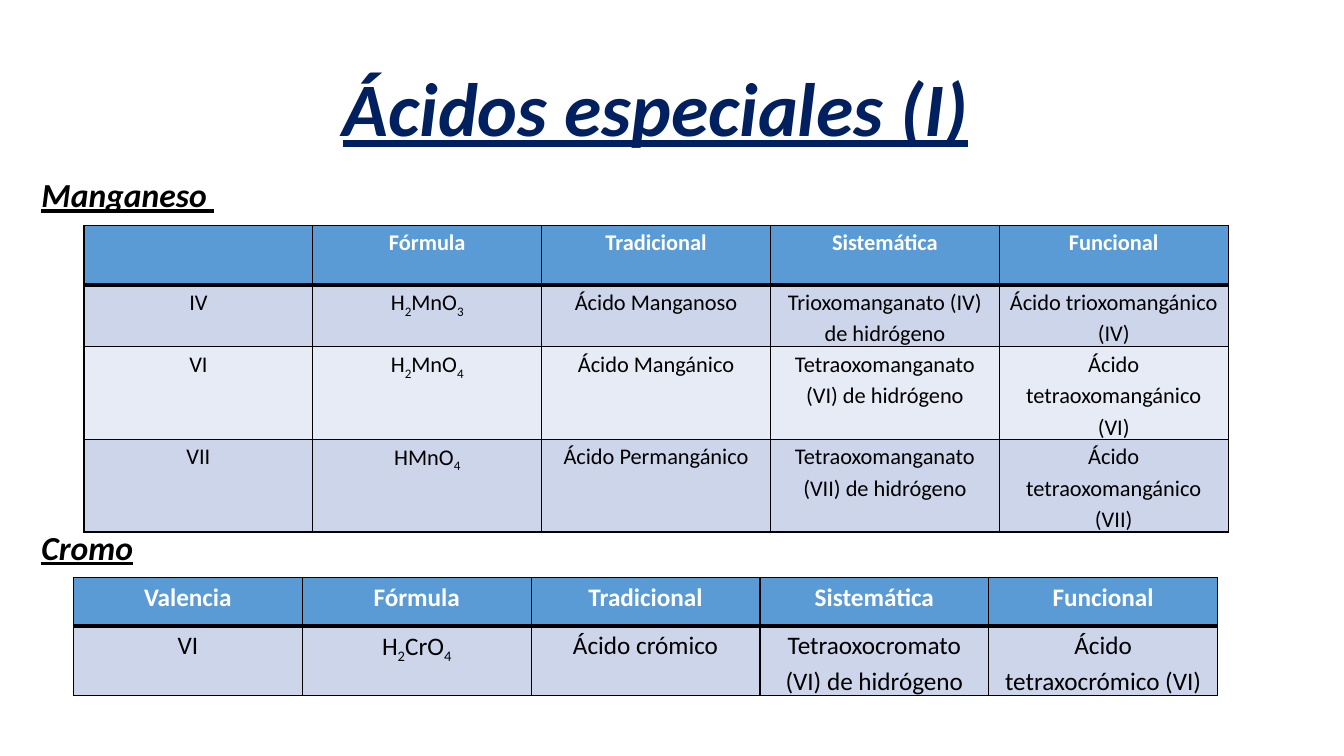
from itertools import groupby

from lxml import etree
from pptx import Presentation
from pptx.dml.color import RGBColor
from pptx.enum.text import MSO_ANCHOR, PP_ALIGN
from pptx.oxml.ns import qn
from pptx.util import Pt

CENTER = PP_ALIGN.CENTER
LEFT = PP_ALIGN.LEFT
TOP = MSO_ANCHOR.TOP
BOTTOM = MSO_ANCHOR.BOTTOM

NAVY = RGBColor(0x00, 0x20, 0x60)
BLACK = RGBColor(0x00, 0x00, 0x00)
WHITE = RGBColor(0xFF, 0xFF, 0xFF)
HEADER_BLUE = RGBColor(0x5B, 0x9B, 0xD5)
BANDS = (RGBColor(0xCC, 0xD5, 0xEA), RGBColor(0xE7, 0xEB, 0xF5))

FONT = "Calibri"
COLUMN_WIDTH = 163.45
THIN, THICK = 1, 3

MANGANESE = [
    ["", "Fórmula", "Tradicional", "Sistemática", "Funcional"],
    ["IV", "H2MnO3", "Ácido Manganoso",
     "Trioxomanganato (IV) de hidrógeno", "Ácido trioxomangánico (IV)"],
    ["VI", "H2MnO4", "Ácido Mangánico",
     "Tetraoxomanganato (VI) de hidrógeno", "Ácido tetraoxomangánico (VI)"],
    ["VII", "HMnO4", "Ácido Permangánico",
     "Tetraoxomanganato (VII) de hidrógeno", "Ácido tetraoxomangánico (VII)"],
]
CHROMIUM = [
    ["Valencia", "Fórmula", "Tradicional", "Sistemática", "Funcional"],
    ["VI", "H2CrO4", "Ácido crómico",
     "Tetraoxocromato (VI) de hidrógeno", "Ácido tetraxocrómico (VI)"],
]


def set_font(para, size, color, bold):
    para.font.name = FONT
    para.font.size = Pt(size)
    para.font.color.rgb = color
    para.font.bold = bold


def add_heading(page, text, left, top, height, size, color, align, anchor):
    box = page.shapes.add_textbox(Pt(left), Pt(top), Pt(824.5), Pt(height))
    frame = box.text_frame
    frame.word_wrap = True
    frame.vertical_anchor = anchor
    para = frame.paragraphs[0]
    para.text = text
    para.alignment = align
    para.line_spacing = 0.9
    set_font(para, size, color, True)
    para.font.italic = True
    para.font.underline = True


def add_formula(para, text):
    for is_digit, letters in groupby(text, str.isdigit):
        span = para.add_run()
        span.text = "".join(letters)
        if is_digit:
            span._r.get_or_add_rPr().set("baseline", "-25000")


def set_borders(cell, top, bottom):
    properties = cell._tc.get_or_add_tcPr()
    widths = {"a:lnL": THIN, "a:lnR": THIN, "a:lnT": top, "a:lnB": bottom}
    for tag, width in widths.items():
        line = etree.SubElement(properties, qn(tag), w=str(Pt(width)))
        fill = etree.SubElement(line, qn("a:solidFill"))
        etree.SubElement(fill, qn("a:srgbClr"), val=str(BLACK))


def fill_cell(cell, text, row, size, space_after):
    is_header = row == 0
    set_borders(cell, THICK if row == 1 else THIN, THICK if is_header else THIN)
    cell.fill.solid()
    cell.fill.fore_color.rgb = HEADER_BLUE if is_header else BANDS[(row - 1) % 2]
    cell.margin_left = cell.margin_right = Pt(7)
    cell.margin_top = cell.margin_bottom = Pt(0)
    para = cell.text_frame.paragraphs[0]
    para.alignment = CENTER
    para.line_spacing = 1.15
    para.space_after = Pt(space_after)
    add_formula(para, text)
    set_font(para, size, WHITE if is_header else BLACK, is_header)


def add_acid_table(page, rows, left, top, row_height, size, space_after):
    columns = len(rows[0])
    table = page.shapes.add_table(
        len(rows), columns, Pt(left), Pt(top),
        Pt(columns * COLUMN_WIDTH), Pt(len(rows) * row_height)).table
    table.horz_banding = False
    for column in table.columns:
        column.width = Pt(COLUMN_WIDTH)
    for row, texts in enumerate(rows):
        table.rows[row].height = Pt(row_height)
        for column, text in enumerate(texts):
            fill_cell(table.cell(row, column), text, row, size, space_after)


def main():
    deck = Presentation()
    deck.slide_width = Pt(960)
    deck.slide_height = Pt(540)
    page = deck.slides.add_slide(deck.slide_layouts[6])

    add_heading(page, "Ácidos especiales (I)", 56, 50.5, 62, 54, NAVY, CENTER, BOTTOM)
    add_heading(page, "Manganeso ", 22.5, 124, 36, 24, BLACK, LEFT, TOP)
    add_heading(page, "Cromo", 22.5, 376, 36, 24, BLACK, LEFT, TOP)
    add_acid_table(page, MANGANESE, 60, 161, 42.5, 16, 0)
    add_acid_table(page, CHROMIUM, 52.5, 412.5, 34.75, 18, 10)

    deck.save("out.pptx")


if __name__ == "__main__":
    main()
